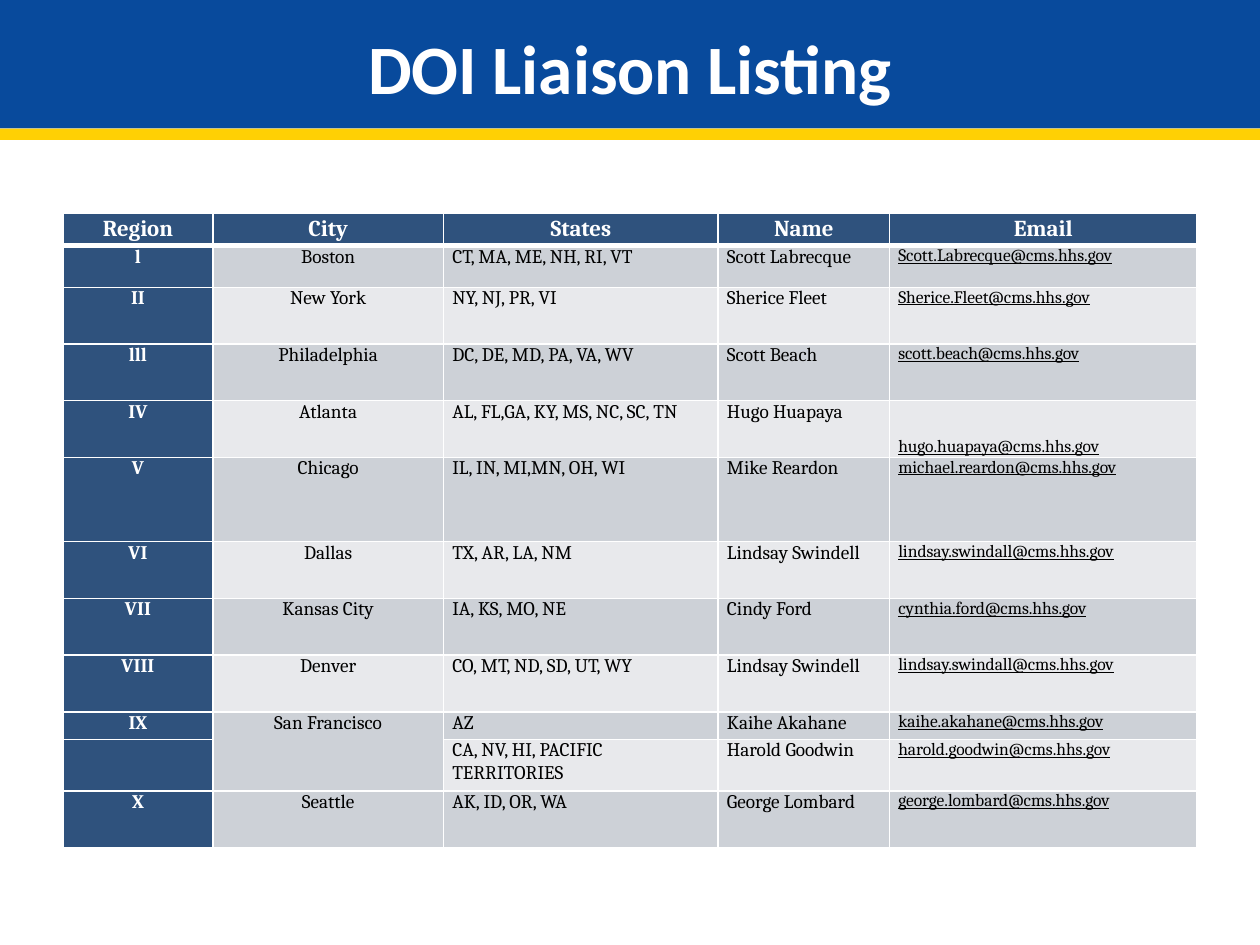
from lxml.etree import SubElement
from pptx import Presentation
from pptx.dml.color import RGBColor
from pptx.enum.shapes import MSO_SHAPE
from pptx.enum.text import MSO_ANCHOR, PP_ALIGN
from pptx.oxml.ns import qn
from pptx.util import Inches, Pt

COLORS = {"blue": "084A9C", "gold": "FFD004", "navy": "2F527D", "odd": "CDD1D7",
          "even": "E8E9EC", "white": "FFFFFF", "black": "000000"}
TITLE = "DOI Liaison Listing"
HEADERS = ["Region", "City", "States", "Name", "Email"]
LIAISONS = [
    ("l", "Boston", "CT, MA, ME, NH, RI, VT", "Scott Labrecque", "Scott.Labrecque@cms.hhs.gov"),
    ("II", "New York", "NY, NJ, PR, VI", "Sherice Fleet", "Sherice.Fleet@cms.hhs.gov"),
    ("lll", "Philadelphia", "DC, DE, MD, PA, VA, WV", "Scott Beach", "scott.beach@cms.hhs.gov"),
    ("IV", "Atlanta", "AL, FL,GA, KY, MS, NC, SC, TN", "Hugo Huapaya", "hugo.huapaya@cms.hhs.gov"),
    ("V", "Chicago", "IL, IN, MI,MN, OH, WI", "Mike Reardon", "michael.reardon@cms.hhs.gov"),
    ("VI", "Dallas", "TX, AR, LA, NM", "Lindsay Swindell", "lindsay.swindall@cms.hhs.gov"),
    ("VII", "Kansas City", "IA, KS, MO, NE", "Cindy Ford", "cynthia.ford@cms.hhs.gov"),
    ("VIII", "Denver", "CO, MT, ND, SD, UT, WY", "Lindsay Swindell", "lindsay.swindall@cms.hhs.gov"),
    ("IX", "San Francisco", "AZ", "Kaihe Akahane", "kaihe.akahane@cms.hhs.gov"),
    ("", "", "CA, NV, HI, PACIFIC TERRITORIES", "Harold Goodwin", "harold.goodwin@cms.hhs.gov"),
    ("X", "Seattle", "AK, ID, OR, WA", "George Lombard", "george.lombard@cms.hhs.gov"),
]
COL_WIDTHS = [1.19, 1.83, 2.18, 1.36, 2.44]
ROW = 0.45
ROW_HEIGHTS = [0.26, 0.33, ROW, ROW, ROW, 0.67, ROW, ROW, ROW, 0.22, 0.41, ROW]
REGION, CITY, EMAIL = 0, 1, 4
BOTTOM_ANCHORED = (4, EMAIL)
MERGED_CITY_ROWS = (9, 10)


def rgb(name):
    return RGBColor.from_string(COLORS[name])


def add_text(p, text, font, size, color, bold=False, underline=False):
    r = p.add_run()
    r.text = text
    r.font.name, r.font.size = font, Pt(size)
    r.font.bold, r.font.underline = bold, underline
    r.font.color.rgb = rgb(color)


def add_band(s, title, top, height, color):
    sp = s.shapes.add_shape(MSO_SHAPE.RECTANGLE, Inches(-0.02), Inches(top),
                            Inches(10.06), Inches(height))
    sp.shadow.inherit = False
    sp.fill.solid()
    sp.fill.fore_color.rgb = rgb(color)
    sp.line.fill.background()
    title.element.addprevious(sp.element)


def set_borders(cell, bottom, top):
    tc_pr = cell.fill._xPr
    widths = {"a:lnL": 1, "a:lnR": 1, "a:lnT": top, "a:lnB": bottom}
    for i, (tag, width) in enumerate(widths.items()):
        ln = tc_pr.makeelement(qn(tag), {"w": str(Pt(width))})
        fill = SubElement(ln, qn("a:solidFill"))
        SubElement(fill, qn("a:srgbClr"), val=COLORS["white"])
        tc_pr.insert(i, ln)


def fill_cell(cell, row, col, text):
    header, region, email = row == 0, col == REGION, col == EMAIL
    strong = header or region
    cell.margin_left = cell.margin_right = Inches(0.07)
    cell.margin_top = cell.margin_bottom = 0
    cell.vertical_anchor = MSO_ANCHOR.MIDDLE if header else MSO_ANCHOR.TOP
    if (row, col) == BOTTOM_ANCHORED:
        cell.vertical_anchor = MSO_ANCHOR.BOTTOM
    cell.fill.solid()
    cell.fill.fore_color.rgb = rgb("navy" if strong else "odd" if row % 2 else "even")
    set_borders(cell, 3 if header else 1, 3 if row == 1 else 1)
    if text:
        p = cell.text_frame.paragraphs[0]
        p.alignment = PP_ALIGN.CENTER if header or col <= CITY else PP_ALIGN.LEFT
        size = 13 if header else 10 if email else 11
        add_text(p, text, "Cambria", size, "white" if strong else "black",
                 strong, email and not header)


def add_liaison_table(s):
    rows = [HEADERS, *LIAISONS]
    frame = s.shapes.add_table(len(rows), len(HEADERS), Inches(0.5), Inches(1.69),
                               Inches(sum(COL_WIDTHS)), Inches(sum(ROW_HEIGHTS)))
    table = frame.table
    for column, width in zip(table.columns, COL_WIDTHS):
        column.width = Inches(width)
    for row, height in zip(table.rows, ROW_HEIGHTS):
        row.height = Inches(height)
    for i, values in enumerate(rows):
        for j, text in enumerate(values):
            fill_cell(table.cell(i, j), i, j, text)
    first, last = MERGED_CITY_ROWS
    table.cell(first, CITY).merge(table.cell(last, CITY))


def main():
    prs = Presentation()
    prs.slide_width, prs.slide_height = Inches(10), Inches(7.5)
    s = prs.slides.add_slide(prs.slide_layouts[5])
    title = s.shapes.title
    title.left, title.top = 0, Inches(0.15)
    title.width, title.height = prs.slide_width, Inches(0.76)
    tf = title.text_frame
    tf.vertical_anchor = MSO_ANCHOR.MIDDLE
    tf.paragraphs[0].alignment = PP_ALIGN.CENTER
    add_text(tf.paragraphs[0], TITLE, "Calibri", 39.6, "white", bold=True)
    add_band(s, title, 0, 1.02, "blue")
    add_band(s, title, 1.02, 0.09, "gold")
    add_liaison_table(s)
    prs.save("out.pptx")


if __name__ == "__main__":
    main()
